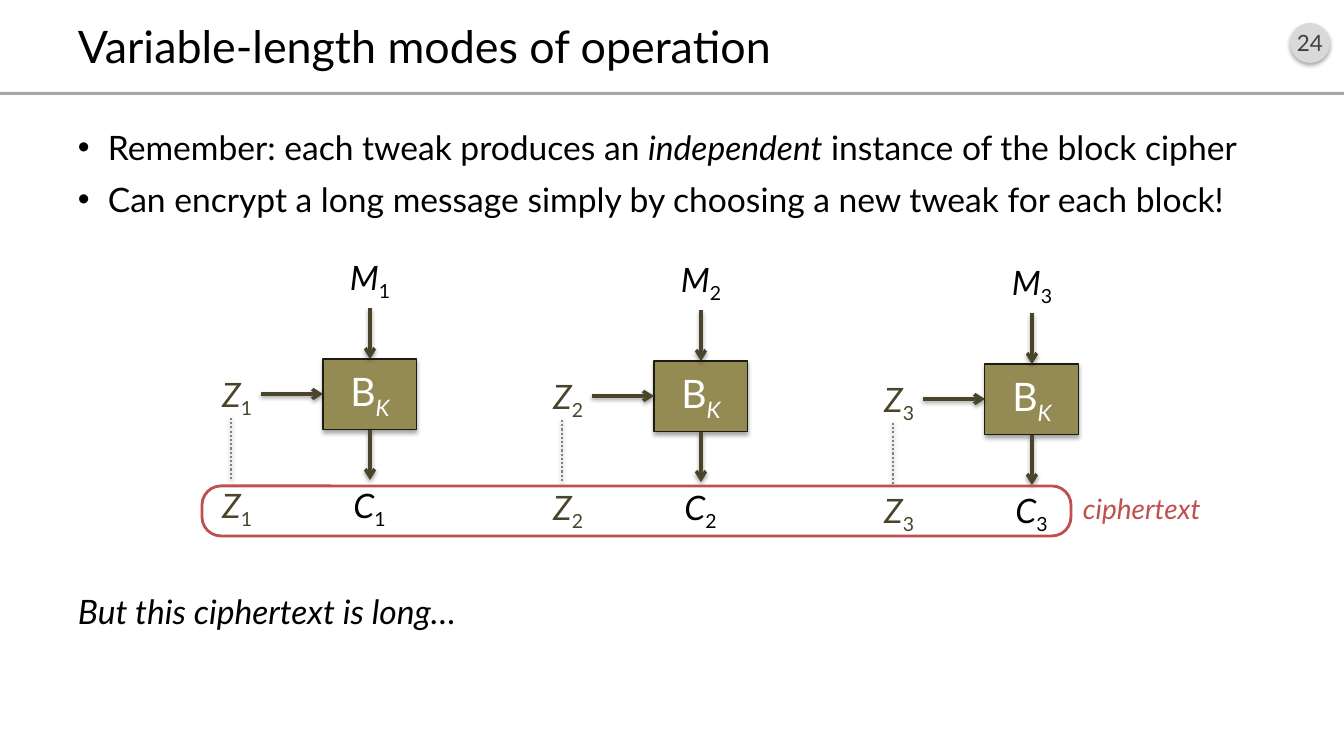
from lxml import etree
from pptx import Presentation
from pptx import util as u
from pptx.dml.color import RGBColor
from pptx.enum import dml, shapes, text
from pptx.oxml import ns

PX = u.Inches(1) / 100.8
FONT = "Lato"
COLOURS = {
    "black": "000000", "white": "FFFFFF", "badge": "D9D9D9", "number": "404040",
    "rule": "A6A6A6", "olive": "948A54", "edge": "1E1C11", "tweak": "4A452A",
    "dots": "808080", "red": "C0504D",
}
RGB = {name: RGBColor.from_string(value) for name, value in COLOURS.items()}
LEFT, CENTER, RIGHT = text.PP_ALIGN.LEFT, text.PP_ALIGN.CENTER, text.PP_ALIGN.RIGHT
MIDDLE, TOP = text.MSO_ANCHOR.MIDDLE, text.MSO_ANCHOR.TOP

deck = Presentation()
deck.slide_width, deck.slide_height = round(1344 * PX), round(756 * PX)
slide = deck.slides.add_slide(deck.slide_layouts[6])
shadowed = []


def write(box, paragraphs, size, colour="black", align=LEFT, anchor=TOP, kind=None):
    """Add a text box or preset shape; "i" means italic and "s" subscript."""
    place = [round(length * PX) for length in box]
    if kind is None:
        item = slide.shapes.add_textbox(*place)
    else:
        item = slide.shapes.add_shape(kind, *place)
        item.shadow.inherit = False
    frame = item.text_frame
    frame.word_wrap, frame.vertical_anchor = True, anchor
    for i, pieces in enumerate(paragraphs):
        paragraph = frame.add_paragraph() if i else frame.paragraphs[0]
        paragraph.alignment = align
        for words, style in pieces:
            run = paragraph.add_run()
            run.text = words
            run.font.name, run.font.size = FONT, u.Pt(size)
            run.font.color.rgb = RGB[colour]
            run.font.italic = "i" in style
            if "s" in style:
                run.font._element.set("baseline", "-25000")
    return item


def connect(x1, y1, x2, y2, colour, width, arrow=True):
    ends = [round(length * PX) for length in (x1, y1, x2, y2)]
    link = slide.shapes.add_connector(shapes.MSO_CONNECTOR.STRAIGHT, *ends)
    link.line.color.rgb, link.line.width = RGB[colour], u.Pt(width)
    if arrow:
        etree.SubElement(link.line._get_or_add_ln(), ns.qn("a:tailEnd"), type="arrow")
    else:
        link.line.dash_style = dml.MSO_LINE.ROUND_DOT
    etree.SubElement(link._element.spPr, ns.qn("a:effectLst"))
    shadowed.append((link, 20000, 38000))


# Header: page number, rule and title
badge = write((1290, 23, 40, 40), [[("24", "")]], 16, "number", CENTER, MIDDLE,
              shapes.MSO_SHAPE.OVAL)
badge.text_frame.margin_left = badge.text_frame.margin_right = 0
badge.fill.solid()
badge.fill.fore_color.rgb = RGB["badge"]
badge.line.fill.background()
shadowed.append((badge, 23000, 35000))

rule = write((0, 92, 1344, 3), [], 16, kind=shapes.MSO_SHAPE.RECTANGLE)
rule.fill.solid()
rule.fill.fore_color.rgb = RGB["rule"]
rule.line.fill.background()

write((68, 16, 1210, 60), [[("Variable-length modes of operation", "")]], 32, anchor=MIDDLE)

# Bullets and closing remark
points = write((68, 122, 1210, 110), [
    [("Remember: each tweak produces an ", ""), ("independent", "i"),
     (" instance of the block cipher", "")],
    [("Can encrypt a long message simply by choosing a new tweak for each block!", "")],
], 24)
for point in points.text_frame.paragraphs:
    point.space_before = u.Pt(8)
    indent = round(30 * PX)
    properties = point._p.get_or_add_pPr()
    properties.set("marL", str(indent))
    properties.set("indent", str(-indent))
    etree.SubElement(properties, ns.qn("a:buFont"), typeface="Arial")
    etree.SubElement(properties, ns.qn("a:buChar"), char="•")

write((68, 586, 1210, 50), [[("But this ciphertext is long…", "i")]], 24)

# One tweaked block cipher per message block, each slightly lower than the last
for column in range(3):
    x, y = 331 * column, 5 * column // 2
    index = (str(column + 1), "s")
    cipher = write((x + 323, y + 359, 94, 71), [[("B", ""), ("K", "is")]], 28, "white",
                   CENTER, MIDDLE, shapes.MSO_SHAPE.RECTANGLE)
    cipher.fill.solid()
    cipher.fill.fore_color.rgb = RGB["olive"]
    cipher.line.color.rgb, cipher.line.width = RGB["edge"], u.Pt(0.75)
    shadowed.append((cipher, 23000, 35000))

    connect(x + 370, y + 308, x + 370, y + 359, "tweak", 2.5)
    connect(x + 370, y + 430, x + 370, y + 480, "tweak", 2.5)
    connect(x + 261, y + 394, x + 323, y + 394, "tweak", 2.5)
    connect(x + 231, y + 418, x + 231, y + 480, "dots", 1.5, arrow=False)

    write((x + 302, y + 252, 136, 50), [[("M", "i"), index]], 24, align=CENTER)
    write((x + 284, y + 480, 171, 50), [[("C", "i"), index]], 24, align=CENTER)
    for tweak_top in (369, 480):
        write((x + 201, y + tweak_top, 61, 50), [[("Z", "i"), index]], 24, "tweak", RIGHT)

# Ciphertext outline and label
outline = write((202, 486, 869, 50), [], 20, kind=shapes.MSO_SHAPE.ROUNDED_RECTANGLE)
outline.adjustments[0] = 0.38
outline.fill.background()
outline.line.color.rgb, outline.line.width = RGB["red"], u.Pt(2)
label = write((1073, 487, 140, 44), [[("ciphertext", "i")]], 20, "red")
label.text_frame.word_wrap = False

# Soft shadows straight below
for item, distance, opacity in shadowed:
    effects = item._element.spPr.find(ns.qn("a:effectLst"))
    shadow = etree.SubElement(effects, ns.qn("a:outerShdw"), blurRad="40000",
                              dist=str(distance), dir="5400000", rotWithShape="0")
    tint = etree.SubElement(shadow, ns.qn("a:srgbClr"), val=COLOURS["black"])
    etree.SubElement(tint, ns.qn("a:alpha"), val=str(opacity))

deck.save("out.pptx")
